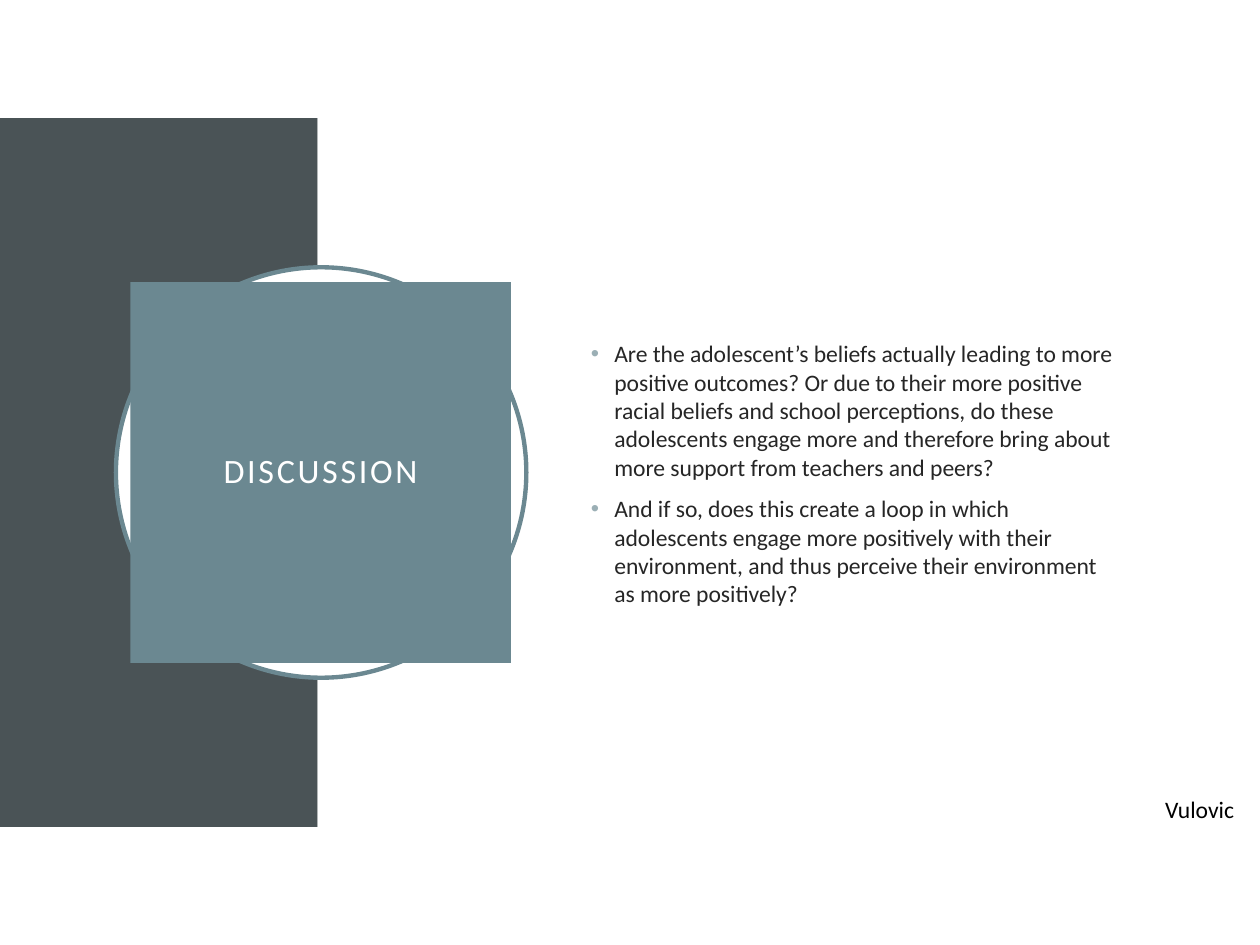
from dataclasses import dataclass
from typing import Optional

import pptx
import pptx.dml.color
import pptx.enum.shapes
import pptx.enum.text
import pptx.oxml
import pptx.oxml.ns
import pptx.util

Pt = pptx.util.Pt
SHAPES = pptx.enum.shapes.MSO_SHAPE
ANCHOR = pptx.enum.text.MSO_ANCHOR
ALIGN = pptx.enum.text.PP_ALIGN

COLORS = {
    "dark": "4A5356",
    "white": "FFFFFF",
    "teal": "6B8891",
    "bullet": "9BAFB5",
    "body": "262626",
    "black": "000000",
}
QUESTIONS = [
    "Are the adolescent’s beliefs actually leading to more positive outcomes? "
    "Or due to their more positive racial beliefs and school perceptions, "
    "do these adolescents engage more and therefore bring about more support "
    "from teachers and peers?",
    "And if so, does this create a loop in which adolescents engage more "
    "positively with their environment, and thus perceive their environment "
    "as more positively?",
]


@dataclass
class Box:
    left: float
    top: float
    width: float
    height: float

    def lengths(self) -> list:
        return [Pt(v) for v in (self.left, self.top, self.width, self.height)]


@dataclass
class Panel:
    kind: int
    box: Box
    fill: str
    line: Optional[str] = None


PANELS = [
    Panel(SHAPES.RECTANGLE, Box(0, 67.5, 181.5, 405), "dark"),
    Panel(SHAPES.RECTANGLE, Box(181.5, 67.5, 538.5, 405), "white"),
    Panel(SHAPES.OVAL, Box(66.25, 152.75, 234.5, 234.5), "white", "teal"),
    Panel(SHAPES.RECTANGLE, Box(74.5, 161.25, 217.5, 217.5), "teal"),
]


def rgb(name: str) -> pptx.dml.color.RGBColor:
    return pptx.dml.color.RGBColor.from_string(COLORS[name])


def apply(target, values: dict) -> None:
    for name, value in values.items():
        setattr(target, name, value)


def draw_panel(s, panel: Panel):
    sp = s.shapes.add_shape(panel.kind, *panel.box.lengths())
    sp.shadow.inherit = False
    sp.fill.solid()
    sp.fill.fore_color.rgb = rgb(panel.fill)
    if panel.line:
        sp.line.color.rgb = rgb(panel.line)
        sp.line.width = Pt(2.5)
    else:
        sp.line.fill.background()
    return sp


def add_run(p, text: str, size: float, color: str):
    r = p.add_run()
    r.text = text
    apply(r.font, {"name": "Calibri", "size": Pt(size)})
    r.font.color.rgb = rgb(color)
    return r


def add_bullet(p) -> None:
    pPr = p._p.get_or_add_pPr()
    pPr.set("marL", str(Pt(13.5)))
    pPr.set("indent", str(Pt(-13.5)))
    ns = pptx.oxml.ns.nsdecls("a")
    for xml in (
        f'<a:buClr {ns}><a:srgbClr val="{COLORS["bullet"]}"/></a:buClr>',
        f'<a:buFont {ns} typeface="Arial"/>',
        f'<a:buChar {ns} char="•"/>',
    ):
        pPr.append(pptx.oxml.parse_xml(xml))


def draw_title(sp, text: str) -> None:
    tf = sp.text_frame
    sides = ("left", "top", "right", "bottom")
    apply(tf, {f"margin_{side}": Pt(14.4) for side in sides})
    apply(tf, {"word_wrap": True, "vertical_anchor": ANCHOR.MIDDLE})
    p = tf.paragraphs[0]
    apply(p, {"alignment": ALIGN.CENTER, "line_spacing": 0.9})
    r = add_run(p, text, 19.5, "white")
    r.font._element.set("spc", "150")


def draw_questions(s, box: Box, questions: list[str]) -> None:
    tf = s.shapes.add_textbox(*box.lengths()).text_frame
    apply(tf, {"word_wrap": True, "vertical_anchor": ANCHOR.MIDDLE})
    for i, question in enumerate(questions):
        p = tf.add_paragraph() if i else tf.paragraphs[0]
        p.space_before = Pt(7.5)
        add_bullet(p)
        add_run(p, question, 13.5, "body")


def draw_name(s, box: Box, name: str) -> None:
    tf = s.shapes.add_textbox(*box.lengths()).text_frame
    apply(tf, {
        "word_wrap": True,
        "auto_size": pptx.enum.text.MSO_AUTO_SIZE.SHAPE_TO_FIT_TEXT,
    })
    add_run(tf.paragraphs[0], name, 13.5, "black")


def main() -> None:
    prs = pptx.Presentation()
    apply(prs, {"slide_width": Pt(720), "slide_height": Pt(540)})
    s = prs.slides.add_slide(prs.slide_layouts[6])
    panels = [draw_panel(s, panel) for panel in PANELS]
    draw_title(panels[-1], "DISCUSSION")
    draw_questions(s, Box(330.5, 150.5, 314, 240), QUESTIONS)
    draw_name(s, Box(658.75, 450.75, 76.5, 24), "Vulovic")
    prs.save("out.pptx")


if __name__ == "__main__":
    main()
